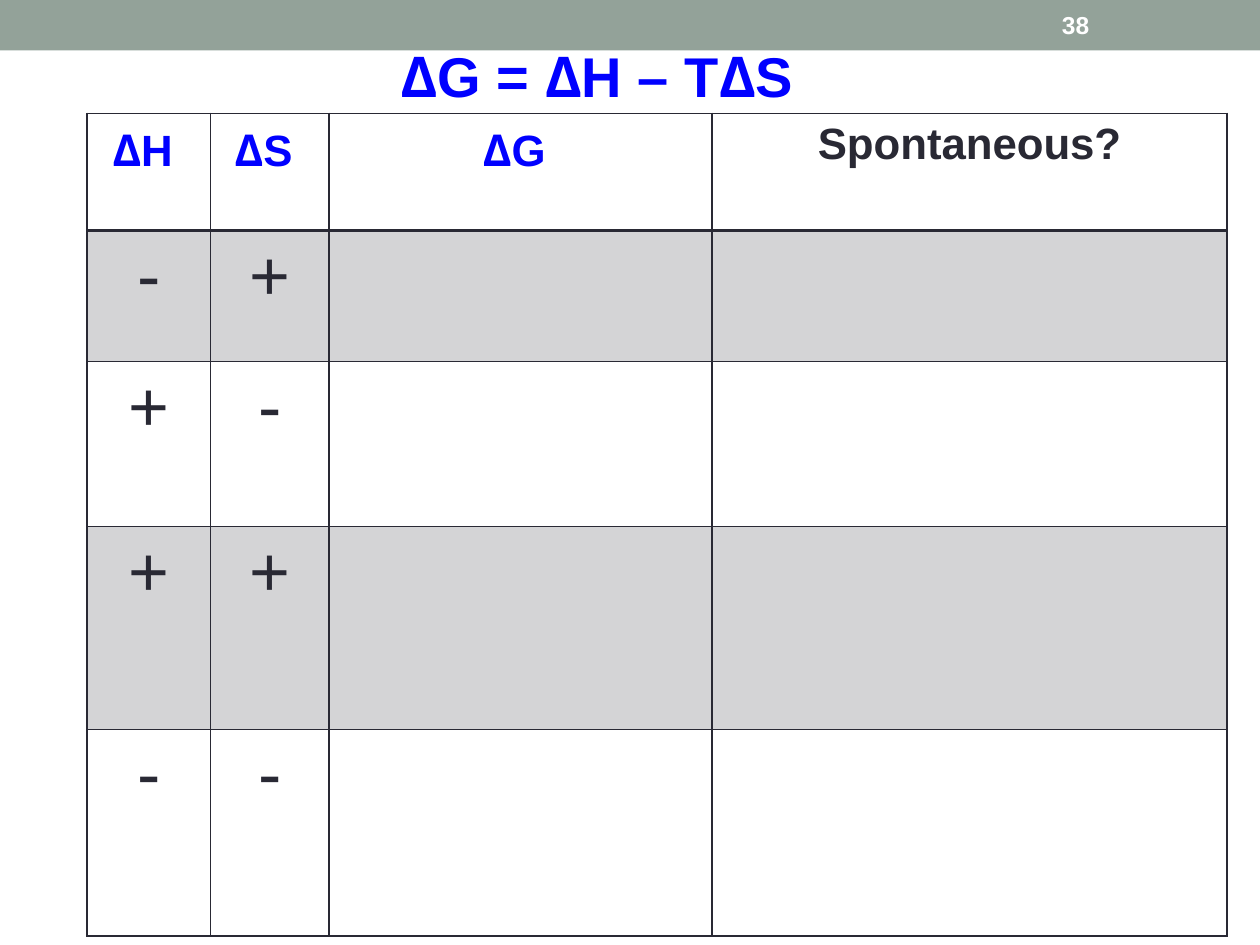
from lxml import etree
from pptx import Presentation
from pptx.dml.color import RGBColor
from pptx.enum.shapes import MSO_SHAPE
from pptx.enum.text import MSO_ANCHOR, MSO_AUTO_SIZE, PP_ALIGN
from pptx.oxml.ns import qn
from pptx.util import Inches, Pt

RECTANGLE = MSO_SHAPE.RECTANGLE
TOP, MIDDLE = MSO_ANCHOR.TOP, MSO_ANCHOR.MIDDLE
LEFT, CENTER = PP_ALIGN.LEFT, PP_ALIGN.CENTER
NO_AUTOFIT = MSO_AUTO_SIZE.NONE

BLUE, DARK, SAGE, WHITE = "0000FF", "292934", "93A299", "FFFFFF"
DELTA = "Δ"
COLUMN_WIDTHS = [0.98, 0.94, 3.04, 4.09]
ROW_HEIGHTS = [0.93, 1.04, 1.31, 1.61, 1.64]
HEADERS = ["ΔH ", "ΔS ", "ΔG ", "Spontaneous?"]
SIGNS = [("-", "+"), ("+", "-"), ("+", "+"), ("-", "-")]


def color(hex_string):
    return RGBColor.from_string(hex_string)


def write_text(paragraph, text, size, text_color, bold, alignment):
    """Write one line, with each delta in its own run and font."""
    paragraph.alignment = alignment
    pieces = text.replace(DELTA, f"|{DELTA}|").split("|")
    for piece in filter(None, pieces):
        run = paragraph.add_run()
        run.text = piece
        run.font.name = "Noto Sans" if piece == DELTA else "Arial"
        run.font.size = Pt(size)
        run.font.bold = bold
        run.font.color.rgb = color(text_color)


def add_header_bar(slide):
    bar = slide.shapes.add_shape(RECTANGLE, 0, 0, Inches(10), Inches(0.4))
    bar.shadow.inherit = False
    bar.fill.solid()
    bar.fill.fore_color.rgb = color(SAGE)
    bar.line.fill.background()


def add_slide_number(slide, number):
    box = slide.shapes.add_textbox(Inches(8.33), Inches(0.02), Inches(1.17), Inches(0.36))
    text_frame = box.text_frame
    text_frame.word_wrap = True
    text_frame.vertical_anchor = MIDDLE
    write_text(text_frame.paragraphs[0], number, 14, WHITE, True, LEFT)


def set_title(slide, text):
    title = slide.shapes.title
    title.left, title.top = Inches(3.08), Inches(0.28)
    title.width, title.height = Inches(3.45), Inches(1.18)
    text_frame = title.text_frame
    text_frame.word_wrap = False
    text_frame.auto_size = NO_AUTOFIT
    text_frame.vertical_anchor = TOP
    write_text(text_frame.paragraphs[0], text, 32, BLUE, True, LEFT)


def set_borders(cell, top_width, bottom_width):
    properties = cell._tc.get_or_add_tcPr()
    widths = {"a:lnL": 1, "a:lnR": 1, "a:lnT": top_width, "a:lnB": bottom_width}
    for tag, width in widths.items():
        line = etree.SubElement(properties, qn(tag), w=str(Pt(width)))
        fill = etree.SubElement(line, qn("a:solidFill"))
        etree.SubElement(fill, qn("a:srgbClr"), val=DARK)


def set_fill(cell, shaded):
    if not shaded:
        cell.fill.background()
        return
    cell.fill.solid()
    cell.fill.fore_color.rgb = color(DARK)
    fill_color = cell._tc.tcPr.find(qn("a:solidFill")).find(qn("a:srgbClr"))
    etree.SubElement(fill_color, qn("a:alpha"), val="20000")


def add_sign_table(slide):
    table = slide.shapes.add_table(
        len(ROW_HEIGHTS), len(COLUMN_WIDTHS), Inches(0.69), Inches(0.9),
        Inches(sum(COLUMN_WIDTHS)), Inches(sum(ROW_HEIGHTS))).table
    table.first_row = table.horz_banding = False
    for column, width in zip(table.columns, COLUMN_WIDTHS):
        column.width = Inches(width)
    for row_index, height in enumerate(ROW_HEIGHTS):
        row = table.rows[row_index]
        row.height = Inches(height)
        for cell in row.cells:
            # The rule under the header is shared by the first two rows
            set_borders(cell, 2 if row_index == 1 else 1, 2 if row_index == 0 else 1)
            set_fill(cell, row_index % 2 == 1)

    # Header labels
    for cell, label in zip(table.rows[0].cells, HEADERS):
        text_color = BLUE if DELTA in label else DARK
        write_text(cell.text_frame.paragraphs[0], label, 25, text_color, True, CENTER)

    # Sign combinations
    for row_index, signs in enumerate(SIGNS, start=1):
        for cell, sign in zip(table.rows[row_index].cells, signs):
            write_text(cell.text_frame.paragraphs[0], sign, 40, DARK, False, CENTER)


def main():
    presentation = Presentation()
    presentation.slide_width, presentation.slide_height = Inches(10), Inches(7.5)
    slide = presentation.slides.add_slide(presentation.slide_layouts[5])
    add_header_bar(slide)
    add_slide_number(slide, "38")
    set_title(slide, "ΔG = ΔH – TΔS")
    add_sign_table(slide)
    presentation.save("out.pptx")


if __name__ == "__main__":
    main()
